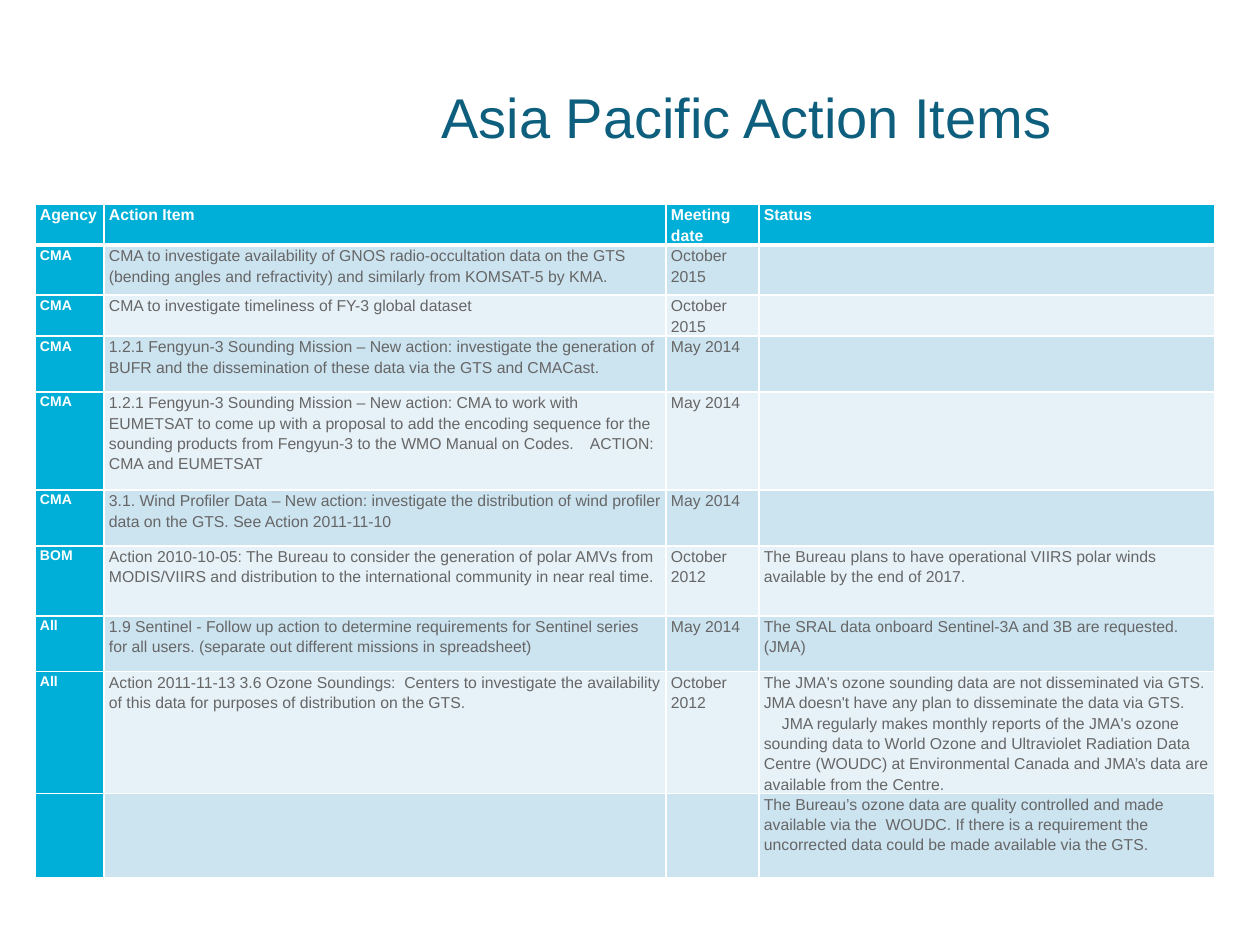
from lxml.etree import SubElement
from pptx import Presentation
from pptx.dml.color import RGBColor
from pptx.enum.text import MSO_ANCHOR, PP_ALIGN
from pptx.oxml import parse_xml
from pptx.oxml.ns import nsdecls, qn
from pptx.util import Emu, Pt

COLORS = {
    "title": "0E5F7E",
    "accent": "00AFD7",
    "white": "FFFFFF",
    "body": "666666",
    "dark_band": "CCE3F0",
    "light_band": "E7F2F8",
}
FONT = "Arial"
INSET = 5
COLUMN_WIDTHS = [69, 562, 93, 456]
ROW_HEIGHTS = [41, 50, 41, 56, 98, 56, 70, 56, 121, 84]
CODES_TAB = 481
REPORT_INDENT = 18

ROWS = [
    ["Agency", "Action Item", "Meeting date", "Status"],
    ["CMA", "CMA to investigate availability of GNOS radio-occultation data on the GTS "
     "(bending angles and refractivity) and similarly from KOMSAT-5 by KMA.", "October 2015", ""],
    ["CMA", "CMA to investigate timeliness of FY-3 global dataset", "October 2015", ""],
    ["CMA", "1.2.1 Fengyun-3 Sounding Mission – New action: investigate the generation of BUFR "
     "and the dissemination of these data via the GTS and CMACast.", "May 2014", ""],
    ["CMA", "1.2.1 Fengyun-3 Sounding Mission – New action: CMA to work with EUMETSAT to come up "
     "with a proposal to add the encoding sequence for the sounding products from Fengyun-3 "
     "to the WMO Manual on Codes.\tACTION: CMA and EUMETSAT", "May 2014", ""],
    ["CMA", "3.1. Wind Profiler Data – New action: investigate the distribution of wind profiler "
     "data on the GTS. See Action 2011-11-10", "May 2014", ""],
    ["BOM", "Action 2010-10-05: The Bureau to consider the generation of polar AMVs from "
     "MODIS/VIIRS and distribution to the international community in near real time.",
     "October 2012",
     "The Bureau plans to have operational VIIRS polar winds available by the end of 2017."],
    ["All", "1.9 Sentinel - Follow up action to determine requirements for Sentinel series for "
     "all users. (separate out different missions in spreadsheet)", "May 2014",
     "The SRAL data onboard Sentinel-3A and 3B are requested. (JMA)"],
    ["All", "Action 2011-11-13 3.6 Ozone Soundings:  Centers to investigate the availability of "
     "this data for purposes of distribution on the GTS.", "October 2012",
     "The JMA's ozone sounding data are not disseminated via GTS.  JMA doesn't have any plan "
     "to disseminate the data via GTS.\n"
     "JMA regularly makes monthly reports of the JMA's ozone sounding data to World Ozone and "
     "Ultraviolet Radiation Data Centre (WOUDC) at Environmental Canada and JMA’s data are "
     "available from the Centre."],
    ["", "", "", "The Bureau’s ozone data are quality controlled and made available via the  "
     "WOUDC. If there is a requirement the uncorrected data could be made available via the GTS."],
]


def px(length):
    return Emu(round(length * 914400 / 126))


class ActionSlide:
    def __init__(self, deck):
        self.page = deck.slides.add_slide(deck.slide_layouts[5])

    def style_paragraph(self, para, size, color, bold=False):
        for span in para.runs:
            span.font.name = FONT
            span.font.size = Pt(size)
            span.font.bold = bold
            span.font.color.rgb = RGBColor.from_string(COLORS[color])
        if not para.runs:
            SubElement(para._p, qn("a:endParaRPr"), sz=str(size * 100))

    def title(self, text, left, top, width, height):
        box = self.page.shapes.title
        box.left, box.top, box.width, box.height = map(px, (left, top, width, height))
        frame = box.text_frame
        frame.text = text
        frame.vertical_anchor = MSO_ANCHOR.MIDDLE
        para = frame.paragraphs[0]
        para.alignment = PP_ALIGN.CENTER
        self.style_paragraph(para, 32, "title")

    def borders(self, cell, top, bottom):
        properties = cell._tc.get_or_add_tcPr()
        sides = [("L", 1), ("R", 1), ("T", top), ("B", bottom)]
        for position, (side, points) in enumerate(sides):
            properties.insert(position, parse_xml(
                f'<a:ln{side} {nsdecls("a")} w="{Pt(points)}"><a:solidFill>'
                f'<a:srgbClr val="{COLORS["white"]}"/></a:solidFill></a:ln{side}>'))

    def cell(self, cell, text, row, column):
        header, agency = row == 0, column == 0
        accent = header or agency
        band = "dark_band" if row % 2 else "light_band"
        cell.fill.solid()
        cell.fill.fore_color.rgb = RGBColor.from_string(COLORS["accent" if accent else band])
        self.borders(cell, 3 if row == 1 else 1, 3 if header else 1)
        cell.margin_left = cell.margin_right = px(INSET)
        cell.margin_top = cell.margin_bottom = 0
        cell.text_frame.text = text
        for order, para in enumerate(cell.text_frame.paragraphs):
            para.line_spacing = 1.15
            properties = para._p.get_or_add_pPr()
            if order:
                properties.set("indent", str(px(REPORT_INDENT)))
            if "\t" in para.text:
                tabs = SubElement(properties, qn("a:tabLst"))
                SubElement(tabs, qn("a:tab"), pos=str(px(CODES_TAB)), algn="l")
            size = 8 if agency and not header else 9
            self.style_paragraph(para, size, "white" if accent else "body", accent)

    def table(self, rows, left, top, widths, heights):
        frame = self.page.shapes.add_table(
            len(rows), len(widths), px(left), px(top), px(sum(widths)), px(sum(heights)))
        table = frame.table
        table.horz_banding = False
        for column, width in zip(table.columns, widths):
            column.width = px(width)
        for row, height in zip(table.rows, heights):
            row.height = px(height)
        for row, texts in enumerate(rows):
            for column, text in enumerate(texts):
                self.cell(table.cell(row, column), text, row, column)


def main():
    deck = Presentation()
    deck.slide_width, deck.slide_height = px(1260), px(945)
    slide = ActionSlide(deck)
    slide.title("Asia Pacific Action Items", 265, 38, 964, 157)
    slide.table(ROWS, 35, 204, COLUMN_WIDTHS, ROW_HEIGHTS)
    deck.save("out.pptx")


if __name__ == "__main__":
    main()
